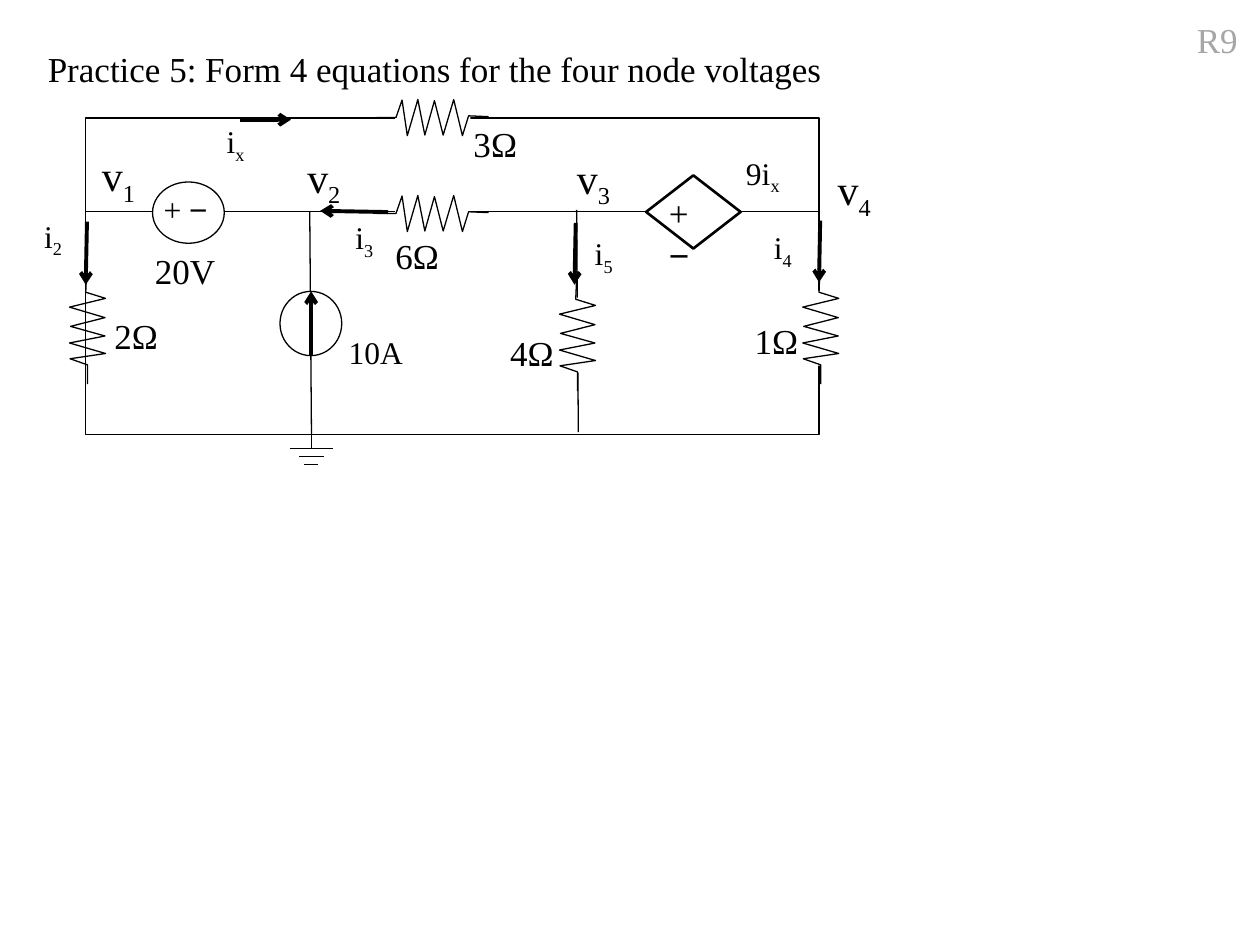
from pptx import Presentation
from pptx.dml.color import RGBColor
from pptx.enum.shapes import MSO_CONNECTOR, MSO_SHAPE as SHAPE
from pptx.enum.text import MSO_AUTO_SIZE as AUTO_SIZE
from pptx.oxml.ns import qn
from pptx.util import Pt
from lxml.etree import SubElement

BLACK = RGBColor(0x00, 0x00, 0x00)
WHITE = RGBColor(0xFF, 0xFF, 0xFF)
GRAY = RGBColor(0xA6, 0xA6, 0xA6)

TEXT_FONT, SIGN_FONT = "Times New Roman", "Arial"
THIN, MEDIUM, THICK = 0.75, 1.5, 2.25
TEXT_HEIGHT = {18: 34, 20: 32, 24: 36}

# Zigzag of a horizontal resistor, measured from its centre
ZIGZAG = [(-32, 0), (-21, 0), (-17.5, -10), (-14.5, 10.3), (-8.5, -10.3),
          (-4.5, 10), (1, -9.7), (6, 10), (12, -10.3), (17, 10.3),
          (20.5, -1), (32, -0.5)]


def add_text(slide, runs, left, top, width, size, color=BLACK, wrap=False):
    """Each run is its text, font name and whether it is a subscript."""
    box = slide.shapes.add_textbox(Pt(left), Pt(top), Pt(width), Pt(TEXT_HEIGHT[size]))
    frame = box.text_frame
    frame.word_wrap = wrap
    frame.auto_size = AUTO_SIZE.SHAPE_TO_FIT_TEXT
    for text, font_name, is_subscript in runs:
        run = frame.paragraphs[0].add_run()
        run.text = text
        for attribute, value in {"name": font_name, "size": Pt(size)}.items():
            setattr(run.font, attribute, value)
        run.font.color.rgb = color
        if is_subscript:
            run._r.get_or_add_rPr().set("baseline", "-25000")


def add_label(slide, text, left, top, width, size, subscript="", color=BLACK):
    runs = [(text, TEXT_FONT, False)]
    if subscript:
        runs.append((subscript, TEXT_FONT, True))
    add_text(slide, runs, left, top, width, size, color)


def add_polarity(slide, left, top, width, size, wrap=False):
    runs = [("+ ", TEXT_FONT, False), ("−", SIGN_FONT, False)]
    add_text(slide, runs, left, top, width, size, wrap=wrap)


def add_wire(slide, x1, y1, x2, y2, weight=THIN, arrow=False):
    wire = slide.shapes.add_connector(MSO_CONNECTOR.STRAIGHT, Pt(x1), Pt(y1), Pt(x2), Pt(y2))
    wire.line.color.rgb = BLACK
    wire.line.width = Pt(weight)
    if arrow:
        SubElement(wire.line._get_or_add_ln(), qn("a:tailEnd"), type="arrow")
    SubElement(wire._element.spPr, qn("a:effectLst"))


def style_shape(shape, fill=None, weight=THIN):
    shape.shadow.inherit = False
    if fill is None:
        shape.fill.background()
    else:
        shape.fill.solid()
        shape.fill.fore_color.rgb = fill
    if weight:
        shape.line.color.rgb = BLACK
        shape.line.width = Pt(weight)
    else:
        shape.line.fill.background()


def add_part(slide, kind, left, top, width, height, fill=WHITE, weight=THIN):
    part = slide.shapes.add_shape(kind, Pt(left), Pt(top), Pt(width), Pt(height))
    style_shape(part, fill, weight)
    return part


def add_resistor(slide, x, y, vertical=False, hides_wire=True):
    rotation = 270 if vertical else 0
    if hides_wire:
        gap = add_part(slide, SHAPE.RECTANGLE, x - 21.5, y - 9.5, 43, 19, weight=0)
        gap.rotation = rotation
    points = [(Pt(x + dx), Pt(y + dy)) for dx, dy in ZIGZAG]
    builder = slide.shapes.build_freeform(*points[0])
    builder.add_line_segments(points[1:], close=False)
    zigzag = builder.convert_to_shape()
    style_shape(zigzag)
    zigzag.rotation = rotation


def add_ground(slide, x, top, bar_top):
    add_wire(slide, x, top, x, bar_top)
    for level, half_width in enumerate((12.5, 7, 4)):
        y = bar_top + level * 4.6
        add_wire(slide, x - half_width, y, x + half_width, y)


def main():
    prs = Presentation()
    prs.slide_width, prs.slide_height = Pt(720), Pt(540)
    slide = prs.slides.add_slide(prs.slide_layouts[6])

    # Page mark and title
    add_label(slide, "R9", 676.8, 7.2, 38, 20, color=GRAY)
    add_label(slide, "Practice 5: Form 4 equations for the four node voltages",
              20.2, 23.8, 459, 20)

    # Wires: inner branches and the two loops
    add_wire(slide, 177, 121, 178, 248.5)
    add_wire(slide, 329.5, 120, 330.5, 247)
    for top, height in ((121, 127.5), (67.5, 53.2)):
        add_part(slide, SHAPE.RECTANGLE, 49, top, 419, height, fill=None)
    add_ground(slide, 178, 230.4, 256.4)

    # Resistors
    add_resistor(slide, 50, 187.5, vertical=True, hides_wire=False)
    add_resistor(slide, 330, 191.5, vertical=True)
    add_resistor(slide, 469, 187.5, vertical=True)
    for y in (67.2, 122):
        add_resistor(slide, 247.3, y)

    # Voltage, current and dependent sources
    add_part(slide, SHAPE.OVAL, 87.2, 104, 41, 35)
    add_polarity(slide, 86.4, 105.1, 44.6, 18)
    add_part(slide, SHAPE.OVAL, 160, 166.5, 35.3, 36.7)
    add_wire(slide, 177.8, 203.5, 177.8, 166.5, THICK, arrow=True)
    add_part(slide, SHAPE.DIAMOND, 369.2, 100.2, 54, 41.8, weight=MEDIUM)
    add_polarity(slide, 375.1, 105.8, 40, 20, wrap=True)

    # Current arrows: ix, i2, i3, i4, i5
    for ends in ((137.3, 68.4, 166.3, 68.4), (49.7, 126.7, 49, 162.7),
                 (221.8, 121.2, 183, 120.5), (468.7, 126, 468, 161.3),
                 (329, 127.4, 328.3, 162.7)):
        add_wire(slide, *ends, THICK, arrow=True)

    # Resistor values
    for value, left, top in (("2Ω", 58.3, 176.4), ("6Ω", 218.9, 130.3),
                             ("3Ω", 263.5, 66.2), ("4Ω", 284.4, 185.8),
                             ("1Ω", 424.1, 179.3)):
        add_label(slide, value, left, top, 40.3, 20)

    # Source values
    add_label(slide, "20V", 81.4, 139, 49.7, 20)
    add_label(slide, "10A", 192.2, 186.5, 46, 18)
    add_label(slide, " 9i", 414.7, 84.2, 44.6, 18, "x")

    # Current names
    for subscript, left, top in (("x", 118, 66.2), ("5", 328.3, 130.3),
                                 ("2", 13.7, 120.2), ("4", 430.6, 126.7),
                                 ("3", 191.5, 121)):
        add_label(slide, " i", left, top, 33.8, 18, subscript)

    # Node voltages
    for subscript, left, top in (("1", 51.1, 82.1), ("2", 168.5, 82.8),
                                 ("3", 322.6, 83.5), ("4", 471.6, 90)):
        add_label(slide, "v", left, top, 34.6, 24, subscript)

    prs.save("out.pptx")


if __name__ == "__main__":
    main()
